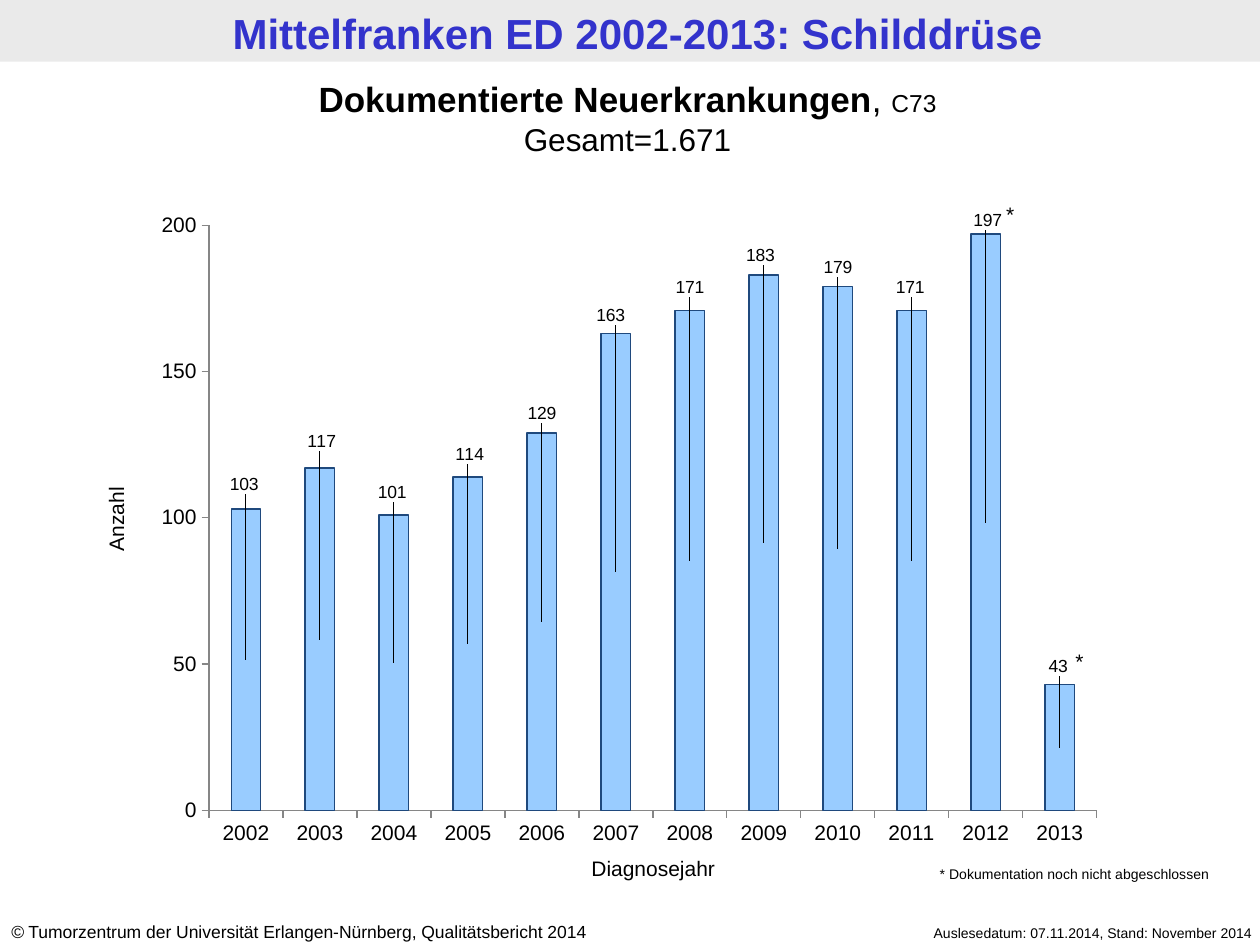
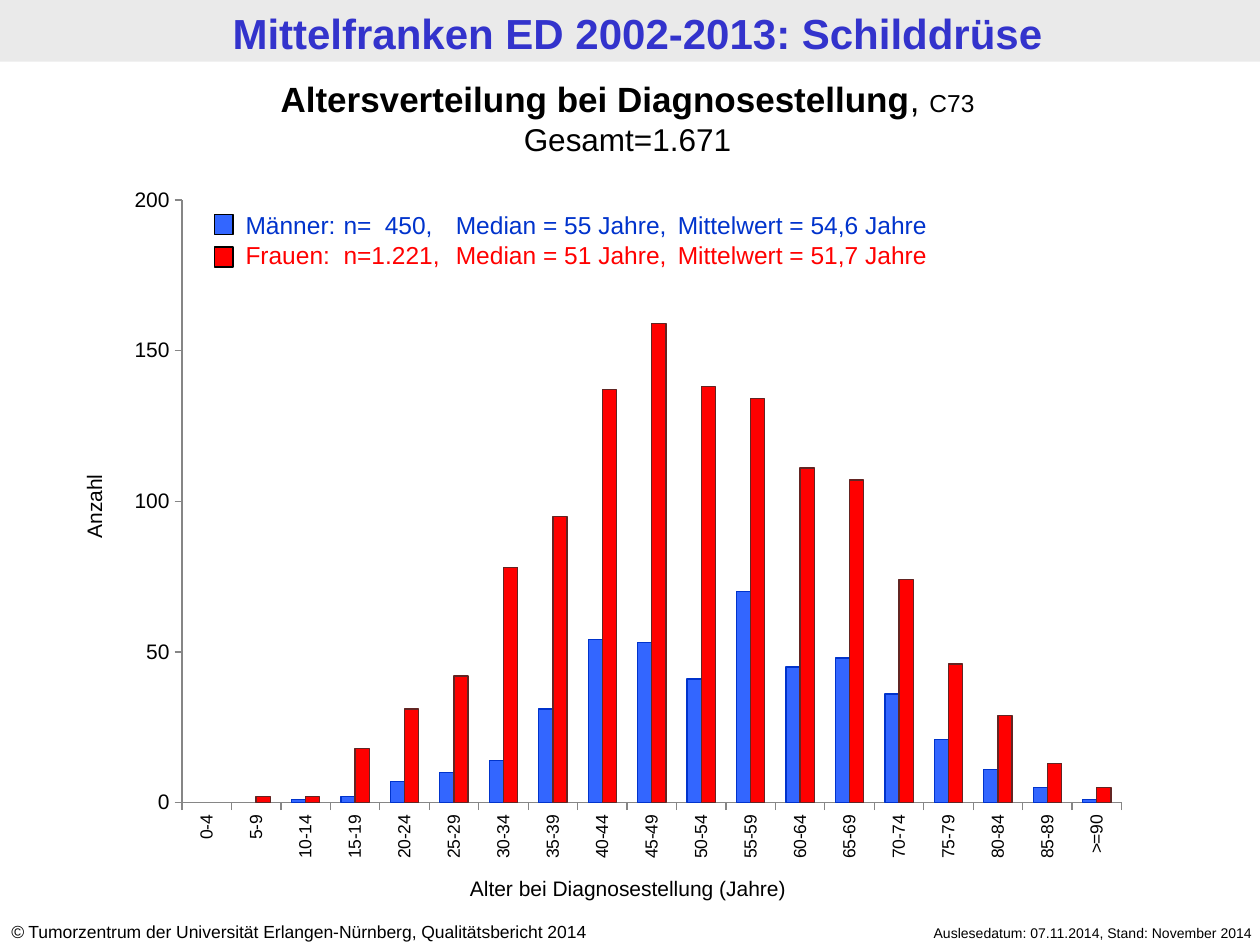
from pptx import Presentation
from pptx.chart.data import CategoryChartData
from pptx.dml.color import RGBColor
from pptx.enum.chart import XL_CHART_TYPE, XL_TICK_MARK
from pptx.enum.shapes import MSO_SHAPE
from pptx.enum.text import PP_ALIGN
from pptx.oxml import parse_xml
from pptx.oxml.ns import nsdecls
from pptx.util import Pt

STACKED, CLUSTERED = XL_CHART_TYPE.COLUMN_STACKED, XL_CHART_TYPE.COLUMN_CLUSTERED
OUT, RECT = XL_TICK_MARK.OUTSIDE, MSO_SHAPE.RECTANGLE
LEFT, MID, RIGHT = PP_ALIGN.LEFT, PP_ALIGN.CENTER, PP_ALIGN.RIGHT

BLACK = RGBColor(0x00, 0x00, 0x00)
BAND = RGBColor(0xEA, 0xEA, 0xEA)
TITLE = RGBColor(0x33, 0x33, 0xCC)
GREY = RGBColor(0x86, 0x86, 0x86)
SKY = RGBColor(0x99, 0xCC, 0xFF)
NAVY = RGBColor(0x1F, 0x49, 0x7D)
BLUE = RGBColor(0x33, 0x66, 0xFF)
DEEP = RGBColor(0x00, 0x33, 0xCC)
RED = RGBColor(0xFF, 0x00, 0x00)
WINE = RGBColor(0x63, 0x25, 0x23)

FONT = "Arial"
TOP = 200  # highest value on both value axes

# Label offsets of the yearly bars, in points
LIFTS = [14, 15, 13, 13, 11, 10, 13, 11, 11, 13, 7.5, 10]
SHIFTS = [-1, 1, -1, 1, 0, -3, 0, -2, 0, -1, 1, -1]


def style(font, color=BLACK, **form):
    for key, value in {"name": FONT, **form}.items():
        setattr(font, key, value)
    font.color.rgb = color


def text(slide, box, lines, align=LEFT, tabs=(), turn=0):
    """Each line is a list of (words, format) runs."""
    shape = slide.shapes.add_textbox(*map(Pt, box))
    shape.rotation = turn
    frame = shape.text_frame
    frame.word_wrap = True
    for num, line in enumerate(lines):
        para = frame.add_paragraph() if num else frame.paragraphs[0]
        para.alignment = align
        if tabs:
            stops = "".join(f'<a:tab pos="{Pt(t)}" algn="l"/>' for t in tabs)
            para._p.get_or_add_pPr().append(
                parse_xml(f'<a:tabLst {nsdecls("a")}>{stops}</a:tabLst>'))
        for words, form in line:
            run = para.add_run()
            run.text = words
            style(run.font, **form)


def label(slide, box, words, size, align=MID, turn=0):
    text(slide, box, [[(words, {"size": Pt(size)})]], align, turn=turn)


def block(slide, box, fill, line=None):
    shape = slide.shapes.add_shape(RECT, *map(Pt, box))
    shape.shadow.inherit = False
    shape.fill.solid()
    shape.fill.fore_color.rgb = fill
    if line is None:
        shape.line.fill.background()
    else:
        shape.line.color.rgb = line
        shape.line.width = Pt(0.75)


def page(deck, head):
    """Blank slide with band, title, footers and heading."""
    slide = deck.slides.add_slide(deck.slide_layouts[6])
    block(slide, (0, 0, 720, 35.3), BAND)
    text(slide, (4.3, 0.7, 720, 35.3),
         [[("Mittelfranken ED 2002-2013: Schilddrüse",
            {"size": Pt(24), "bold": True, "color": TITLE})]], MID)
    label(slide, (478.8, 524.9, 244, 17.3),
          "Auslesedatum: 07.11.2014, Stand: November 2014", 8, RIGHT)
    small = {"size": Pt(10)}
    text(slide, (-0.7, 522.7, 377, 19.4), [[
        ("©", {**small, "italic": True}),
        (" Tumorzentrum der Universität Erlangen-Nürnberg, "
         "Qualitätsbericht 2014", small)]])
    text(slide, (-2.9, 41, 723, 53.3), [
        [(head, {"size": Pt(20), "bold": True}),
         (", ", {"size": Pt(20)}), ("C73", {"size": Pt(14)})],
        [("Gesamt=1.671", {"size": Pt(18)})]], MID)
    return slide


def place(kind, x, y, w=None, h=None):
    """Manual layout element of a plot area or a data label."""
    parts = {"x": x, "y": y}
    if w:
        parts.update(w=w, h=h)
    body = "".join(f'<c:{key} val="{num:.4f}"/>' for key, num in parts.items())
    return parse_xml(f'<c:layout {nsdecls("c")}><c:manualLayout>{kind}{body}'
                     '</c:manualLayout></c:layout>')


def bars(slide, box, kind, cats, rows, area, size):
    """Column chart; rows hold (name, values, fill, line)."""
    data = CategoryChartData()
    data.categories = cats
    for name, vals, *_ in rows:
        data.add_series(name, vals)
    chart = slide.shapes.add_chart(kind, *map(Pt, box), data).chart
    chart.has_legend = chart.has_title = False
    style(chart.font, size=Pt(12))
    plot = chart.plots[0]
    plot.gap_width, plot.vary_by_categories = 150, False
    plot.overlap = 100 if kind == STACKED else 0

    # Axes
    axes = chart.category_axis, chart.value_axis
    for axis, points in zip(axes, (size, 12)):
        axis.has_major_gridlines = False
        axis.major_tick_mark = OUT
        axis.format.line.color.rgb = GREY
        axis.format.line.width = Pt(0.75)
        style(axis.tick_labels.font, size=Pt(points))
    scale = {"minimum_scale": 0, "maximum_scale": TOP, "major_unit": 50}
    for key, value in scale.items():
        setattr(chart.value_axis, key, value)

    # Plot area
    for old in chart._chartSpace.xpath("c:chart/c:plotArea/c:layout"):
        old.getparent().remove(old)
    inner = ('<c:layoutTarget val="inner"/><c:xMode val="edge"/>'
             '<c:yMode val="edge"/>')
    chart._chartSpace.xpath("c:chart/c:plotArea")[0].insert(
        0, place(inner, *area))

    # Series
    for row, (_, _, fill, line) in zip(plot.series, rows):
        row.format.fill.solid()
        row.format.fill.fore_color.rgb = fill
        row.format.line.color.rgb = line
        row.format.line.width = Pt(0.75)
    return chart


def values(chart, box, vals, tall):
    """Move each value from the bar's centre to above its top."""
    row = chart.plots[0].series[0]
    labels = row.data_labels
    labels.show_value = True
    style(labels.font, size=Pt(10))
    for num in range(len(vals)):
        style(row.points[num].data_label.font, size=Pt(10))
    marks = row._element.xpath("c:dLbls/c:dLbl")
    for mark, val, lift, shift in zip(marks, vals, LIFTS, SHIFTS):
        rise = val / TOP * tall / 2 + lift / box[3]
        mark.insert(1, place("", shift / box[2], -rise))


def legend(slide, box, rows):
    """Colour keys beside tabbed lines; rows hold (words, key, colour)."""
    left, top, _, _ = box
    for num, (_, key, _) in enumerate(rows):
        block(slide, (left - 10.8, top + 5.8 + 18.7 * num, 10.8, 11.5),
              key, BLACK)
    text(slide, box, [[(words, {"size": Pt(14), "color": color})]
                      for words, _, color in rows], tabs=(56, 79.6, 120.2, 247))


def years(deck):
    slide = page(deck, "Dokumentierte Neuerkrankungen")
    box = (82.8, 118.1, 555.1, 370.1)
    vals = [103, 117, 101, 114, 129, 163, 171, 183, 179, 171, 197, 43]
    area = (0.066, 0.029, 0.914, 0.903)
    chart = bars(slide, box, STACKED, [str(y) for y in range(2002, 2014)],
                 [("Neuerkrankungen", vals, SKY, NAVY)], area, 12)
    values(chart, box, vals, area[3])
    label(slide, (292.3, 485.3, 162, 21.6), "Diagnosejahr", 12)
    label(slide, (22.3, 285.8, 87.8, 21.6), "Anzahl", 12, turn=270)
    # Marks for years still open
    for left, top in ((558.7, 111.6), (598.3, 367.2)):
        label(slide, (left, top, 28, 21.6), "*", 12, RIGHT)
    label(slide, (529.9, 491, 178.6, 17.3),
          "* Dokumentation noch nicht abgeschlossen", 8, LEFT)


def ages(deck):
    slide = page(deck, "Altersverteilung bei Diagnosestellung")
    cats = [f"{age}-{age + 4}" for age in range(0, 90, 5)] + [">=90"]
    men = [None, None, 1, 2, 7, 10, 14, 31, 54, 53,
           41, 70, 45, 48, 36, 21, 11, 5, 1]
    women = [None, 2, 2, 18, 31, 42, 78, 95, 137, 159,
             138, 134, 111, 107, 74, 46, 29, 13, 5]
    chart = bars(slide, (65.5, 100.1, 587.5, 399.6), CLUSTERED, cats,
                 [("Männer", men, BLUE, DEEP), ("Frauen", women, RED, WINE)],
                 (0.0655, 0.0355, 0.914, 0.862), 10)
    # Upright age labels
    body = chart.category_axis._element.xpath("c:txPr/a:bodyPr")[0]
    body.set("rot", "-5400000")
    body.set("vert", "horz")
    legend(slide, (133.2, 116.6, 493.2, 41), [
        ("Männer:\tn=\t450,\tMedian = 55 Jahre,\tMittelwert = 54,6 Jahre",
         BLUE, DEEP),
        ("Frauen:\tn=1.221,\tMedian = 51 Jahre,\tMittelwert = 51,7 Jahre",
         RED, RED)])
    label(slide, (248.4, 496.8, 221, 21.6),
          "Alter bei Diagnosestellung (Jahre)", 12)
    label(slide, (-40.3, 278.6, 187.9, 21.6), "Anzahl", 12, turn=270)


def main():
    deck = Presentation()
    deck.slide_width, deck.slide_height = Pt(720), Pt(540)
    years(deck)
    ages(deck)
    deck.save("out.pptx")


if __name__ == "__main__":
    main()
